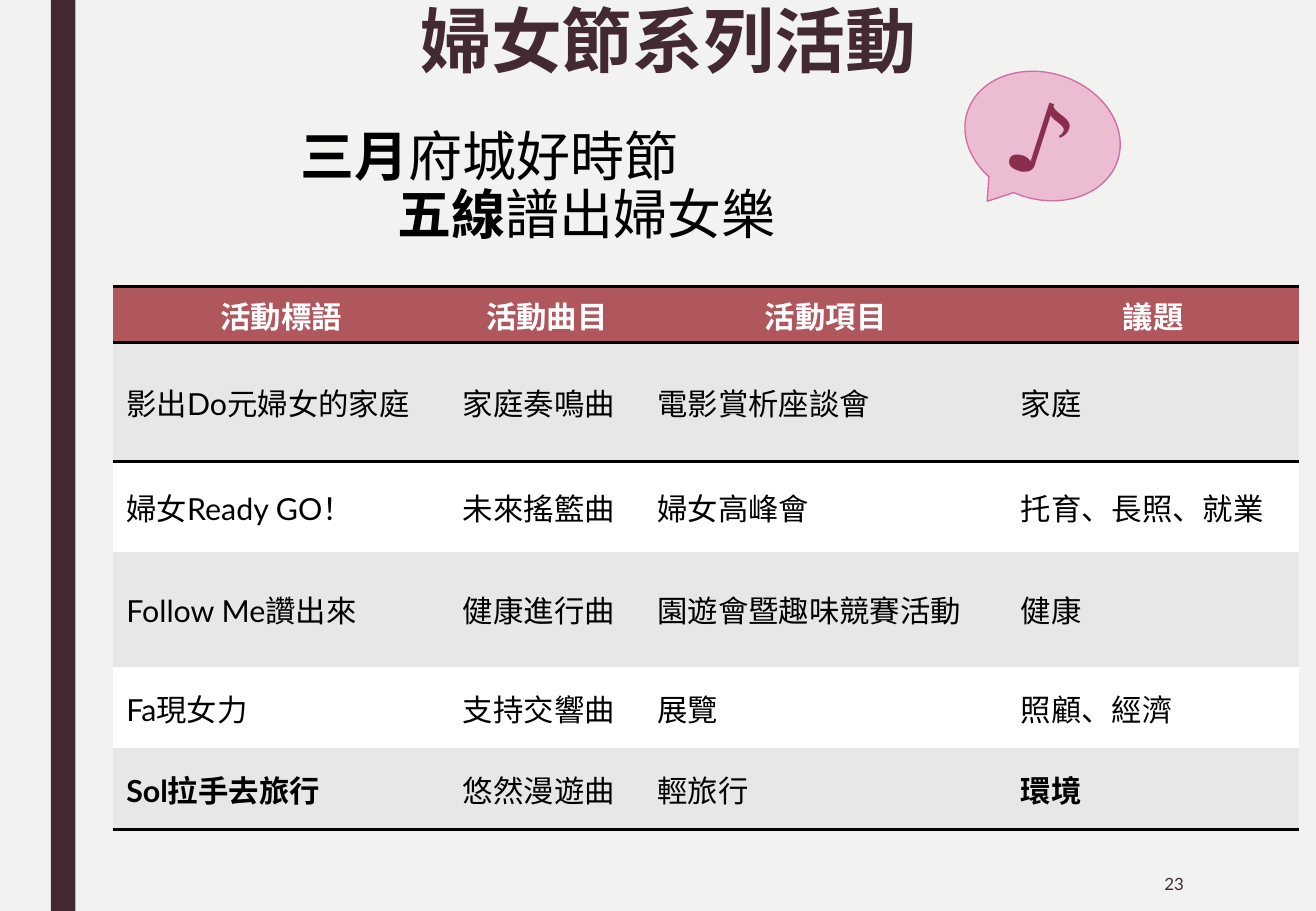
"""Build the Women's Day activity series slide with its programme table."""
from dataclasses import dataclass

from lxml.etree import SubElement
from pptx import Presentation
from pptx.dml.color import RGBColor
from pptx.enum.shapes import MSO_SHAPE
from pptx.enum.text import MSO_ANCHOR, MSO_AUTO_SIZE, PP_ALIGN
from pptx.oxml import parse_xml
from pptx.oxml.ns import nsdecls, qn
from pptx.util import Inches, Pt


@dataclass(frozen=True)
class Theme:
    paper: str = "F2F2F0"
    plum: str = "432A30"
    header: str = "B0565D"
    band: str = "E7E7E7"
    white: str = "FFFFFF"
    black: str = "000000"
    bubble: str = "ECBCD3"
    bubble_line: str = "CF6DA4"
    note: str = "8A2E4E"
    head_font: str = "Arial"
    body_font: str = "Lato"
    note_font: str = "Calibri"
    title_size: int = 42
    slogan_size: int = 32
    table_size: int = 18
    number_size: int = 10
    note_size: int = 60


T = Theme()


def style(p, name, size, color, bold=None, align=PP_ALIGN.LEFT):
    p.alignment = align
    p.font.name, p.font.size, p.font.bold = name, Pt(size), bold
    p.font.color.rgb = RGBColor.from_string(color)


def rule(cell, sides):
    tcPr = cell._tc.get_or_add_tcPr()
    for i, side in enumerate(sides):
        tcPr.insert(i, parse_xml(
            f'<a:{side} {nsdecls("a")} w="25400"><a:solidFill>'
            f'<a:srgbClr val="{T.black}"/></a:solidFill></a:{side}>'))


prs = Presentation()
prs.slide_width, prs.slide_height = Inches(10.83), Inches(7.5)
s = prs.slides.add_slide(prs.slide_layouts[5])
s.background.fill.solid()
s.background.fill.fore_color.rgb = RGBColor.from_string(T.paper)

bar = s.shapes.add_shape(MSO_SHAPE.RECTANGLE, Inches(0.42), 0, Inches(0.2), Inches(7.5))
bar.shadow.inherit = False
bar.fill.solid()
bar.fill.fore_color.rgb = RGBColor.from_string(T.plum)
bar.line.fill.background()

title = s.shapes.title
title.left, title.top = Inches(1.11), Inches(0.06)
title.width, title.height = Inches(8.78), Inches(1.48)
tf = title.text_frame
tf.text = "婦女節系列活動"
tf.auto_size = MSO_AUTO_SIZE.NONE
tf.vertical_anchor = MSO_ANCHOR.TOP
tf.margin_left = tf.margin_right = tf.margin_top = tf.margin_bottom = 0
p = tf.paragraphs[0]
p.line_spacing = 0.89
style(p, T.head_font, T.title_size, T.plum, True, PP_ALIGN.CENTER)

rows = [
    ("活動標語", "活動曲目", "活動項目", "議題"),
    ("影出Do元婦女的家庭", "家庭奏鳴曲", "電影賞析座談會", "家庭"),
    ("婦女Ready GO！", "未來搖籃曲", "婦女高峰會", "托育、長照、就業"),
    ("Follow Me讚出來", "健康進行曲", "園遊會暨趣味競賽活動", "健康"),
    ("Fa現女力", "支持交響曲", "展覽", "照顧、經濟"),
    ("Sol拉手去旅行", "悠然漫遊曲", "輕旅行", "環境"),
]
last = len(rows) - 1
table = s.shapes.add_table(len(rows), 4, Inches(0.93), Inches(2.36),
                           Inches(9.76), Inches(4.41)).table
table._tbl.tblPr.find(qn("a:tableStyleId")).text = "{2D5ABB26-0587-4C30-8999-92F81FD0307C}"
for col, width in zip(table.columns, (2.77, 1.6, 2.99, 2.4)):
    col.width = Inches(width)
for row, height in zip(table.rows, (0.4, 0.98, 0.74, 0.95, 0.67, 0.67)):
    row.height = Inches(height)
for i, texts in enumerate(rows):
    for j, text in enumerate(texts):
        cell = table.cell(i, j)
        cell.text = text
        cell.vertical_anchor = MSO_ANCHOR.MIDDLE
        cell.margin_left = cell.margin_right = Inches(0.11)
        cell.margin_top = cell.margin_bottom = Inches(0.05)
        cell.fill.solid()
        fill = T.header if i == 0 else T.band if i % 2 else T.white
        cell.fill.fore_color.rgb = RGBColor.from_string(fill)
        p = cell.text_frame.paragraphs[0]
        if i == 0:
            style(p, T.body_font, T.table_size, T.white, True, PP_ALIGN.CENTER)
            rule(cell, ("lnT", "lnB"))
        else:
            style(p, T.body_font, T.table_size, T.black, i == last and j in (0, 3))
        if i == 1:
            rule(cell, ("lnT",))
        if i == last:
            rule(cell, ("lnB",))

slogan = s.shapes.add_textbox(Inches(2.36), Inches(0.73), Inches(5.07), Inches(1.64))
tf = slogan.text_frame
tf.word_wrap = True
tf.vertical_anchor = MSO_ANCHOR.MIDDLE
tf.margin_left = tf.margin_right = Inches(0.11)
tf.margin_top = tf.margin_bottom = Inches(0.06)
tf.add_paragraph()
lines = [("三月", "府城好時節", 0), ("五線", "譜出婦女樂", 0.8)]
for p, (strong, plain, indent) in zip(tf.paragraphs, lines):
    p.line_spacing = 0.9
    p._p.get_or_add_pPr().set("marL", str(Inches(indent)))
    style(p, T.head_font, T.slogan_size, T.black)
    for text, bold in ((strong, True), (plain, False)):
        r = p.add_run()
        r.text, r.font.bold = text, bold

bubble = s.shapes.add_shape(MSO_SHAPE.OVAL_CALLOUT, Inches(7.93), Inches(0.6),
                            Inches(1.3), Inches(1.04))
bubble.rotation = 17.7
bubble.shadow.inherit = False
bubble.fill.solid()
bubble.fill.fore_color.rgb = RGBColor.from_string(T.bubble)
bubble.line.color.rgb = RGBColor.from_string(T.bubble_line)
bubble.line.width = Pt(0.79)
tf = bubble.text_frame
tf.text = "♪"
tf.vertical_anchor = MSO_ANCHOR.MIDDLE
tf.margin_left = tf.margin_right = Inches(0.11)
tf.margin_top = tf.margin_bottom = Inches(0.06)
style(tf.paragraphs[0], T.note_font, T.note_size, T.note, align=PP_ALIGN.CENTER)

number = s.shapes.add_textbox(Inches(8.42), Inches(7.06), Inches(1.42), Inches(0.44))
tf = number.text_frame
tf.text = "23"
tf.word_wrap = True
tf.vertical_anchor = MSO_ANCHOR.MIDDLE
style(tf.paragraphs[0], T.body_font, T.number_size, T.plum, align=PP_ALIGN.RIGHT)

prs.save("out.pptx")
